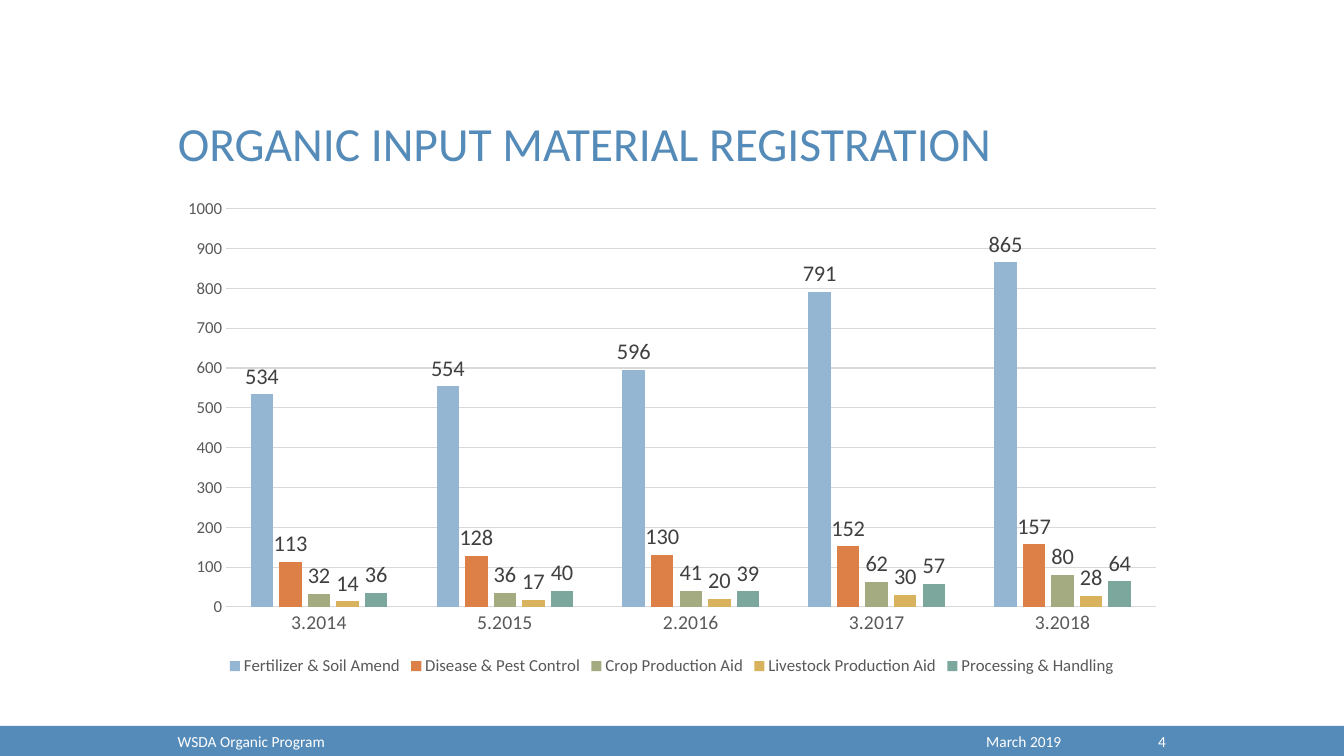
from pptx import Presentation
from pptx.chart.data import CategoryChartData
from pptx.dml.color import RGBColor
from pptx.enum.chart import (XL_CHART_TYPE, XL_LABEL_POSITION,
                             XL_LEGEND_POSITION, XL_TICK_MARK)
from pptx.enum.shapes import MSO_SHAPE
from pptx.enum.text import MSO_ANCHOR, MSO_AUTO_SIZE, PP_ALIGN
from pptx.util import Cm, Pt

CLUSTERED = XL_CHART_TYPE.COLUMN_CLUSTERED
OUTSIDE_END = XL_LABEL_POSITION.OUTSIDE_END
LEGEND_BOTTOM = XL_LEGEND_POSITION.BOTTOM
NO_TICK = XL_TICK_MARK.NONE
RECTANGLE = MSO_SHAPE.RECTANGLE
BOTTOM, MIDDLE = MSO_ANCHOR.BOTTOM, MSO_ANCHOR.MIDDLE
LEFT, RIGHT = PP_ALIGN.LEFT, PP_ALIGN.RIGHT
NO_FIT = MSO_AUTO_SIZE.NONE

TITLE_ONLY = 5
FONT = "Calibri"
BLUE, WHITE, GREY, DARK, RULE = "558BB8", "FFFFFF", "595959", "404040", "D9D9D9"
SLIDE_W, SLIDE_H = Cm(33.87), Cm(19.05)
MARGIN, CONTENT_W = Cm(4.23), Cm(25.4)

DATES = ["3.2014", "5.2015", "2.2016", "3.2017", "3.2018"]
REGISTRATIONS = [
    ("Fertilizer & Soil Amend", "94B6D2", (534, 554, 596, 791, 865)),
    ("Disease & Pest Control", "DD8047", (113, 128, 130, 152, 157)),
    ("Crop Production Aid", "A5AB81", (32, 36, 41, 62, 80)),
    ("Livestock Production Aid", "D8B25C", (14, 17, 20, 30, 28)),
    ("Processing & Handling", "7BA79D", (36, 40, 39, 57, 64)),
]


def rgb(color):
    return RGBColor.from_string(color)


def style_font(font, size, color):
    font.name = FONT
    font.size = Pt(size)
    font.color.rgb = rgb(color)


def style_line(line, color):
    line.color.rgb = rgb(color)
    line.width = Pt(0.75)


def fill_title(title, left, top, width, height):
    title.left, title.top, title.width, title.height = left, top, width, height
    frame = title.text_frame
    frame.text = "ORGANIC INPUT MATERIAL REGISTRATION"
    frame.auto_size = NO_FIT
    frame.vertical_anchor = BOTTOM
    heading = frame.paragraphs[0]
    heading.alignment = LEFT
    heading.line_spacing = 0.9
    style_font(heading.font, 34, BLUE)


def add_registration_chart(slide, left, top, width, height):
    data = CategoryChartData()
    data.categories = DATES
    for name, _, counts in REGISTRATIONS:
        data.add_series(name, counts)
    chart = slide.shapes.add_chart(CLUSTERED, left, top, width, height, data).chart
    chart.has_title = False
    style_font(chart.font, 10, "000000")

    # Columns and their values
    plot = chart.plots[0]
    plot.gap_width, plot.overlap = 219, -27
    plot.vary_by_categories = False
    for series, (_, color, _) in zip(plot.series, REGISTRATIONS):
        series.format.fill.solid()
        series.format.fill.fore_color.rgb = rgb(color)
        series.invert_if_negative = False
        labels = series.data_labels
        labels.show_value = True
        labels.position = OUTSIDE_END
        style_font(labels.font, 16, DARK)

    # Axes
    dates, counts = chart.category_axis, chart.value_axis
    for axis, size in ((dates, 14), (counts, 12)):
        axis.major_tick_mark = axis.minor_tick_mark = NO_TICK
        style_font(axis.tick_labels.font, size, GREY)
    style_line(dates.format.line, RULE)
    counts.format.line.fill.background()
    counts.minimum_scale, counts.maximum_scale, counts.major_unit = 0, 1000, 100
    style_line(counts.major_gridlines.format.line, RULE)

    # Legend
    chart.has_legend = True
    chart.legend.position = LEGEND_BOTTOM
    chart.legend.include_in_layout = False
    style_font(chart.legend.font, 12, GREY)


def add_footer(slide, left, top, width, height):
    band = slide.shapes.add_shape(RECTANGLE, left, top, width, height)
    band.shadow.inherit = False
    band.fill.solid()
    band.fill.fore_color.rgb = rgb(BLUE)
    band.line.fill.background()

    # Program, date and page number on the band
    for text, offset, text_width, alignment in (
            ("WSDA Organic Program", MARGIN, Cm(18.03), LEFT),
            ("March 2019", Cm(22.73), Cm(4.27), RIGHT),
            ("4", Cm(27.48), Cm(2.15), RIGHT)):
        box = slide.shapes.add_textbox(left + offset, top + Cm(0.06),
                                       text_width, height - Cm(0.12))
        frame = box.text_frame
        frame.word_wrap = True
        frame.margin_top = frame.margin_bottom = 0
        frame.vertical_anchor = MIDDLE
        frame.text = text
        label = frame.paragraphs[0]
        label.alignment = alignment
        style_font(label.font, 11, WHITE)


def main():
    deck = Presentation()
    deck.slide_width, deck.slide_height = SLIDE_W, SLIDE_H
    slide = deck.slides.add_slide(deck.slide_layouts[TITLE_ONLY])
    fill_title(slide.shapes.title, MARGIN, Cm(1.27), CONTENT_W, Cm(3.18))
    add_registration_chart(slide, MARGIN, Cm(4.76), CONTENT_W, Cm(12.38))
    add_footer(slide, 0, Cm(18.29), SLIDE_W, Cm(0.76))
    deck.save("out.pptx")


if __name__ == "__main__":
    main()
